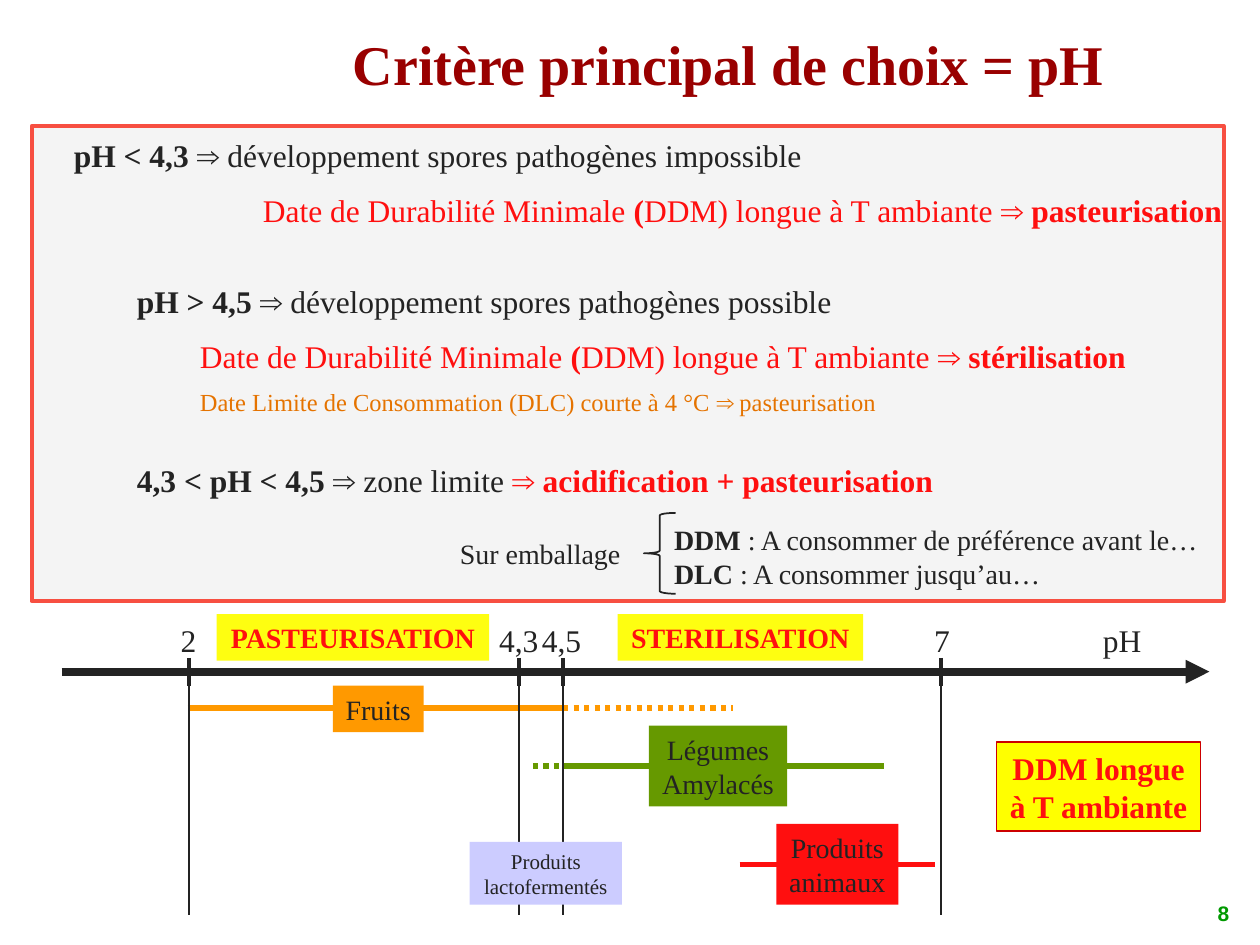
from typing import Any, NamedTuple

import pptx
import pptx.dml.color
import pptx.enum.dml
import pptx.enum.shapes
import pptx.enum.text
import pptx.oxml.ns
import pptx.oxml.xmlchemy
import pptx.util

Cm = pptx.util.Cm
Pt = pptx.util.Pt
Kind = pptx.enum.shapes.MSO_SHAPE
Align = pptx.enum.text.PP_ALIGN
Mid = pptx.enum.text.MSO_ANCHOR.MIDDLE
Dash = pptx.enum.dml.MSO_LINE

INK = {
    "dark": "232323", "red": "FF0F0F", "title": "990000", "amber": "E57300",
    "panel": "F4F4F4", "edge": "F74F41", "fruit": "FF9900", "veg": "669900",
    "lemon": "FEFE11", "yellow": "FFFF00", "rim": "CC0000", "milk": "CCCCFF",
    "page": "009900", "white": "FFFFFF",
}


class Run(NamedTuple):
    text: str
    bold: bool = False
    ink: str = "dark"
    size: float = 18
    font: str = "Times New Roman"


class Para(NamedTuple):
    runs: list[Run]
    left: float = 0
    gap: float = 0


class Box(NamedTuple):
    x: float
    y: float
    w: float
    h: float


class Tag(NamedTuple):
    box: Box
    fill: str
    lines: list[str]
    size: float = 16
    ink: str = "dark"
    bold: bool = False
    edge: str = ""


class Bar(NamedTuple):
    x1: float
    x2: float
    y: float
    ink: str
    dots: bool = False


def tint(name: str) -> pptx.dml.color.RGBColor:
    return pptx.dml.color.RGBColor.from_string(INK[name])


def style(item: Any, look: dict[str, Any]) -> None:
    for key, val in look.items():
        setattr(item, key, val)


def write(shape: Any, paras: list[Para], align: Any, wrap: bool = True,
          look: dict[str, Any] | None = None) -> None:
    frame = shape.text_frame
    style(frame, {"word_wrap": wrap, **(look or {})})
    for num, para in enumerate(paras):
        row = frame.paragraphs[0] if num == 0 else frame.add_paragraph()
        style(row, {"alignment": align, "space_before": Pt(para.gap)})
        if para.left:
            row._p.get_or_add_pPr().set("marL", str(Cm(para.left)))
        for run in para.runs:
            part = row.add_run()
            part.text = run.text
            style(part.font, {"name": run.font, "size": Pt(run.size), "bold": run.bold})
            part.font.color.rgb = tint(run.ink)


def shape(slide: Any, kind: Any, box: Box, fill: str = "", edge: str = "", width: float = 1) -> Any:
    item = slide.shapes.add_shape(kind, *map(Cm, box))
    item.shadow.inherit = False
    if fill:
        item.fill.solid()
        item.fill.fore_color.rgb = tint(fill)
    else:
        item.fill.background()
    if edge:
        item.line.color.rgb = tint(edge)
        item.line.width = Pt(width)
    else:
        item.line.fill.background()
    return item


def text(slide: Any, box: Box, paras: list[Para], align: Any = Align.LEFT,
         wrap: bool = True, look: dict[str, Any] | None = None) -> None:
    write(slide.shapes.add_textbox(*map(Cm, box)), paras, align, wrap, look)


def line(slide: Any, x1: float, y1: float, x2: float, y2: float, ink: str,
         width: float, dots: bool = False, arrow: bool = False) -> None:
    item = slide.shapes.add_connector(
        pptx.enum.shapes.MSO_CONNECTOR.STRAIGHT, *map(Cm, (x1, y1, x2, y2)))
    item.line.color.rgb = tint(ink)
    item.line.width = Pt(width)
    if dots:
        item.line.dash_style = Dash.ROUND_DOT
    prop = item._element.spPr
    if arrow:
        end = pptx.oxml.xmlchemy.OxmlElement("a:tailEnd")
        end.set("type", "triangle")
        prop.find(pptx.oxml.ns.qn("a:ln")).append(end)
    prop.append(pptx.oxml.xmlchemy.OxmlElement("a:effectLst"))


def label(slide: Any, tag: Tag) -> None:
    item = shape(slide, Kind.RECTANGLE, tag.box, tag.fill, tag.edge)
    paras = [Para([Run(row, tag.bold, tag.ink, tag.size)]) for row in tag.lines]
    write(item, paras, Align.CENTER, False, {"vertical_anchor": Mid})


def store(goal: str) -> list[Run]:
    return [
        Run("Date de Durabilité Minimale ", ink="red"), Run("(", True, "red"),
        Run("DDM) longue à T ambiante", ink="red"), Run(" ⇒ " + goal, True, "red"),
    ]


RULES = [
    Para([Run("pH < 4,3 ", True), Run("⇒ développement spores pathogènes impossible")]),
    Para(store("pasteurisation"), 3.81, 9.6),
    Para([Run("pH > 4,5 ", True), Run("⇒ développement spores pathogènes possible")], 1.27, 30.7),
    Para(store("stérilisation"), 2.54, 9.6),
    Para([Run("Date Limite de Consommation (DLC) courte à 4 °C ⇒ pasteurisation",
              ink="amber", size=14)], 2.54, 7.3),
    Para([Run("4,3 < pH < 4,5 ", True), Run("⇒ zone limite "),
          Run("⇒ acidification + pasteurisation", True, "red")], 1.27, 25),
]
DATES = [
    Para([Run("DDM", True, size=16), Run(" : A consommer de préférence avant le…", size=16)]),
    Para([Run("DLC", True, size=16), Run(" : A consommer jusqu’au…", size=16)]),
]
MARKS = [3.81, 10.46, 11.35, 18.97]
SCALE = [("2", 3.8), ("4,3", 10.46), ("4,5", 11.32), ("7", 18.99), ("pH", 22.62)]
BARS = [
    Bar(3.78, 11.35, 14.27, "fruit"), Bar(11.35, 14.78, 14.27, "fruit", True),
    Bar(11.35, 17.83, 15.44, "veg"), Bar(10.74, 11.38, 15.44, "veg", True),
    Bar(14.91, 18.85, 17.42, "red"),
]
TAGS = [
    Tag(Box(6.71, 13.82, 1.83, 0.94), "fruit", ["Fruits"]),
    Tag(Box(13.08, 14.63, 2.79, 1.63), "veg", ["Légumes", "Amylacés"]),
    Tag(Box(15.65, 16.61, 2.46, 1.63), "red", ["Produits", "animaux"]),
    Tag(Box(4.37, 12.38, 5.49, 0.94), "lemon", ["PASTEURISATION"], 16, "red", True),
    Tag(Box(12.45, 12.38, 4.95, 0.94), "lemon", ["STERILISATION"], 16, "red", True),
    Tag(Box(20.09, 14.96, 4.11, 1.8), "yellow", ["DDM longue", "à T ambiante"], 18, "red", True, "rim"),
    Tag(Box(9.47, 16.97, 3.07, 1.27), "milk", ["Produits", "lactofermentés"], 12),
]


def main() -> None:
    deck = pptx.Presentation()
    style(deck, {"slide_width": Cm(25.4), "slide_height": Cm(19.05)})
    slide = deck.slides.add_slide(deck.slide_layouts[6])

    page = shape(slide, Kind.OVAL, Box(24.13, 17.98, 1.07, 0.84), "white")
    write(page, [Para([Run("8", True, "page", 12, "Arial")])], Align.CENTER, False,
          {"vertical_anchor": Mid})
    shape(slide, Kind.RECTANGLE, Box(0.64, 2.54, 24.03, 9.58), "panel", "edge", 2.25)
    text(slide, Box(5.64, 0.48, 18.39, 1.6),
         [Para([Run("Critère principal de choix = pH ", True, "title", 32)])],
         Align.CENTER, look={"vertical_anchor": Mid})
    text(slide, Box(1.24, 2.62, 23.67, 7.82), RULES, look={"margin_right": 0})
    text(slide, Box(13.34, 10.41, 11.33, 1.63), DATES)
    text(slide, Box(8.94, 10.69, 4.04, 0.94),
         [Para([Run("Sur emballage ", size=16)])], Align.CENTER)
    shape(slide, Kind.LEFT_BRACE, Box(12.98, 10.34, 0.64, 1.63), edge="dark")

    line(slide, 1.24, 13.54, 24.38, 13.54, "dark", 4.5, arrow=True)
    for bar in BARS:
        line(slide, bar.x1, bar.y, bar.x2, bar.y, bar.ink, 3, bar.dots)
    for x in MARKS:
        line(slide, x, 13.26, x, 13.82, "dark", 2.25)
        line(slide, x, 13.4, x, 18.45, "dark", 1)
    for name, x in SCALE:
        text(slide, Box(x - 0.65, 12.4, 1.3, 1.02), [Para([Run(name)])], Align.CENTER, False)
    for tag in TAGS:
        label(slide, tag)
    deck.save("out.pptx")


if __name__ == "__main__":
    main()
